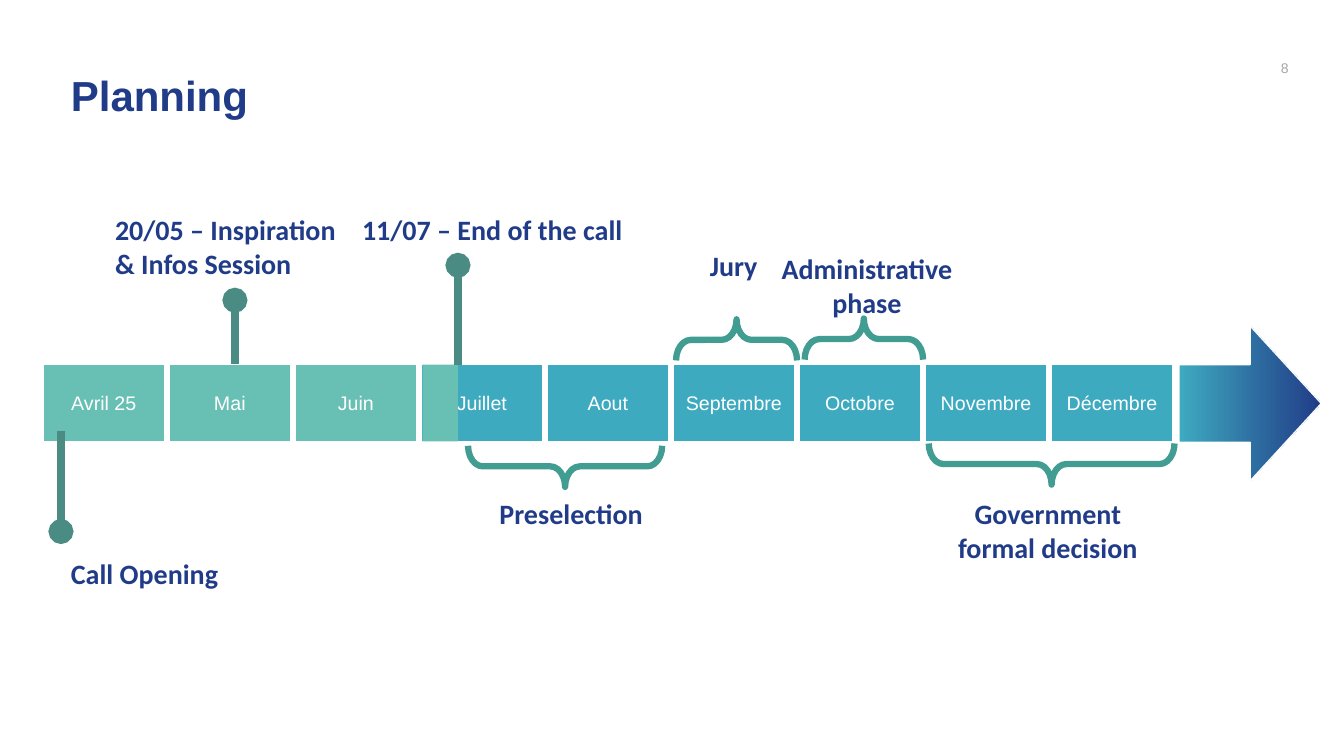
"""Build a planning slide with a month timeline, milestones and phases."""
import copy
import pptx
import pptx.util
import pptx.dml.color
import pptx.enum.shapes
import pptx.enum.text
import pptx.oxml.ns
from lxml import etree

HUES = {
    "navy": "203B87", "blue": "265192", "teal": "3EAAC0", "mint": "68C0B5",
    "pin": "4A8C84", "brace": "419D91", "grey": "A6A6A6", "white": "FFFFFF",
}
KINDS = pptx.enum.shapes.MSO_SHAPE
ALIGN = pptx.enum.text.PP_ALIGN
MIDDLE = pptx.enum.text.MSO_ANCHOR.MIDDLE
Pt = pptx.util.Pt
qn = pptx.oxml.ns.qn


def hue(name):
    return pptx.dml.color.RGBColor.from_string(HUES[name])


class Board:
    """Holds the style and slide; the grid starts at the first month's corner."""
    left, top = 0.43, 3.61
    col, row = 1.25, 0.77
    wide = 0.96

    def __init__(self, slide):
        self.slide = slide
        self.shapes = slide.shapes

    def x(self, cols):
        return pptx.util.Inches(self.left + cols * self.col)

    def y(self, rows):
        return pptx.util.Inches(self.top + rows * self.row)

    def w(self, cols):
        return pptx.util.Inches(cols * self.col)

    def h(self, rows):
        return pptx.util.Inches(rows * self.row)

    def letter(self, frame, text, size, font, tint, align, bold=False):
        frame.word_wrap = True
        frame.text = text
        for para in frame.paragraphs:
            para.alignment = align
            para.font.size = Pt(size)
            para.font.name = font
            para.font.bold = bold
            para.font.color.rgb = hue(tint)

    def label(self, text, x, y, w, h=0.57, align=ALIGN.LEFT, size=20,
              font="Calibri", tint="navy", bold=True):
        box = self.shapes.add_textbox(self.x(x), self.y(y), self.w(w), self.h(h))
        self.letter(box.text_frame, text, size, font, tint, align, bold)
        return box

    def block(self, kind, x, y, w, h, tint, edge=True):
        shape = self.shapes.add_shape(
            kind, self.x(x), self.y(y), self.w(w), self.h(h))
        shape.shadow.inherit = False
        shape.fill.solid()
        shape.fill.fore_color.rgb = hue(tint)
        if edge:
            shape.line.color.rgb = hue("white")
            shape.line.width = Pt(1)
        else:
            shape.line.fill.background()
        return shape

    def month(self, name, spot, tint):
        shape = self.block(KINDS.RECTANGLE, spot, 0, self.wide, 1, tint)
        shape.text_frame.vertical_anchor = MIDDLE
        self.letter(shape.text_frame, name, 14, "Arial", "white", ALIGN.CENTER)

    def arrow(self, x, y, w, h):
        shape = self.block(KINDS.RIGHT_ARROW, x, y, w, h, "teal")
        shape.fill.gradient()
        shape.fill.gradient_angle = 0
        stops = shape._element.spPr.find(".//" + qn("a:gsLst"))
        stops.append(copy.deepcopy(stops[-1]))
        marks = ((0, "teal"), (0.8, "blue"), (1, "navy"))
        for stop, (place, tint) in zip(shape.fill.gradient_stops, marks):
            stop.position = place
            stop.color.rgb = hue(tint)

    def pin(self, x, start, end):
        line = self.shapes.add_connector(
            pptx.enum.shapes.MSO_CONNECTOR.STRAIGHT,
            self.x(x), self.y(start), self.x(x), self.y(end))
        line.line.color.rgb = hue("pin")
        line.line.width = Pt(6)
        props = line._element.spPr
        etree.SubElement(props.find(qn("a:ln")), qn("a:tailEnd"), type="oval")
        etree.SubElement(props, qn("a:effectLst"))

    def brace(self, x, y, span, turn):
        deep, tall = self.h(0.53), self.w(span)
        shape = self.shapes.add_shape(
            KINDS.LEFT_BRACE, self.x(x) - deep // 2, self.y(y) - tall // 2,
            deep, tall)
        shape.shadow.inherit = False
        shape.rotation = turn
        shape.adjustments[0] = 0.36
        shape.fill.background()
        shape.line.color.rgb = hue("brace")
        shape.line.width = Pt(4.5)


def main():
    deck = pptx.Presentation()
    deck.slide_width = pptx.util.Inches(13.33)
    deck.slide_height = pptx.util.Inches(7.5)
    board = Board(deck.slides.add_slide(deck.slide_layouts[6]))

    page = board.label("8", 7.56, -4.08, 2.4, 0.52, ALIGN.RIGHT, 10,
                       "Arial", "grey", False)
    page.text_frame.vertical_anchor = MIDDLE
    board.label("Planning", 0.14, -3.86, 9.7, 0.79, size=30, font="Arial")

    board.arrow(9.01, -0.49, 1.13, 2)
    months = ("Avril 25", "Mai", "Juin", "Juillet", "Aout", "Septembre",
              "Octobre", "Novembre", "Décembre")
    for spot, name in enumerate(months):
        board.month(name, spot, "mint" if spot < 3 else "teal")
    board.block(KINDS.RECTANGLE, 3.01, 0.01, 0.28, 0.99, "mint", edge=False)

    for x, start, end in ((0.14, 0.86, 2.16), (1.52, 0, -0.82),
                          (3.29, 0.01, -1.27)):
        board.pin(x, start, end)
    for x, y, span, turn in ((4.14, 1.32, 1.54, 270), (5.5, -0.31, 0.96, 90),
                             (6.51, -0.32, 0.94, 90), (8, 1.29, 1.95, 270)):
        board.brace(x, y, span, turn)

    board.label("Call Opening", 0.14, 2.42, 1.66)
    board.label("20/05 – Inspiration & Infos Session", 0.49, -2.01, 2.03, 1)
    board.label("11/07 – End of the call", 2.45, -2.01, 2.92)
    board.label("Preselection", 3.54, 1.64, 1.38)
    board.label("Jury", 5.21, -1.55, 0.63)
    board.label("Administrative phase", 5.52, -1.51, 2.03, 1, ALIGN.CENTER)
    board.label("Government\nformal decision", 6.51, 1.65, 2.92, 1, ALIGN.CENTER)
    deck.save("out.pptx")


if __name__ == "__main__":
    main()
